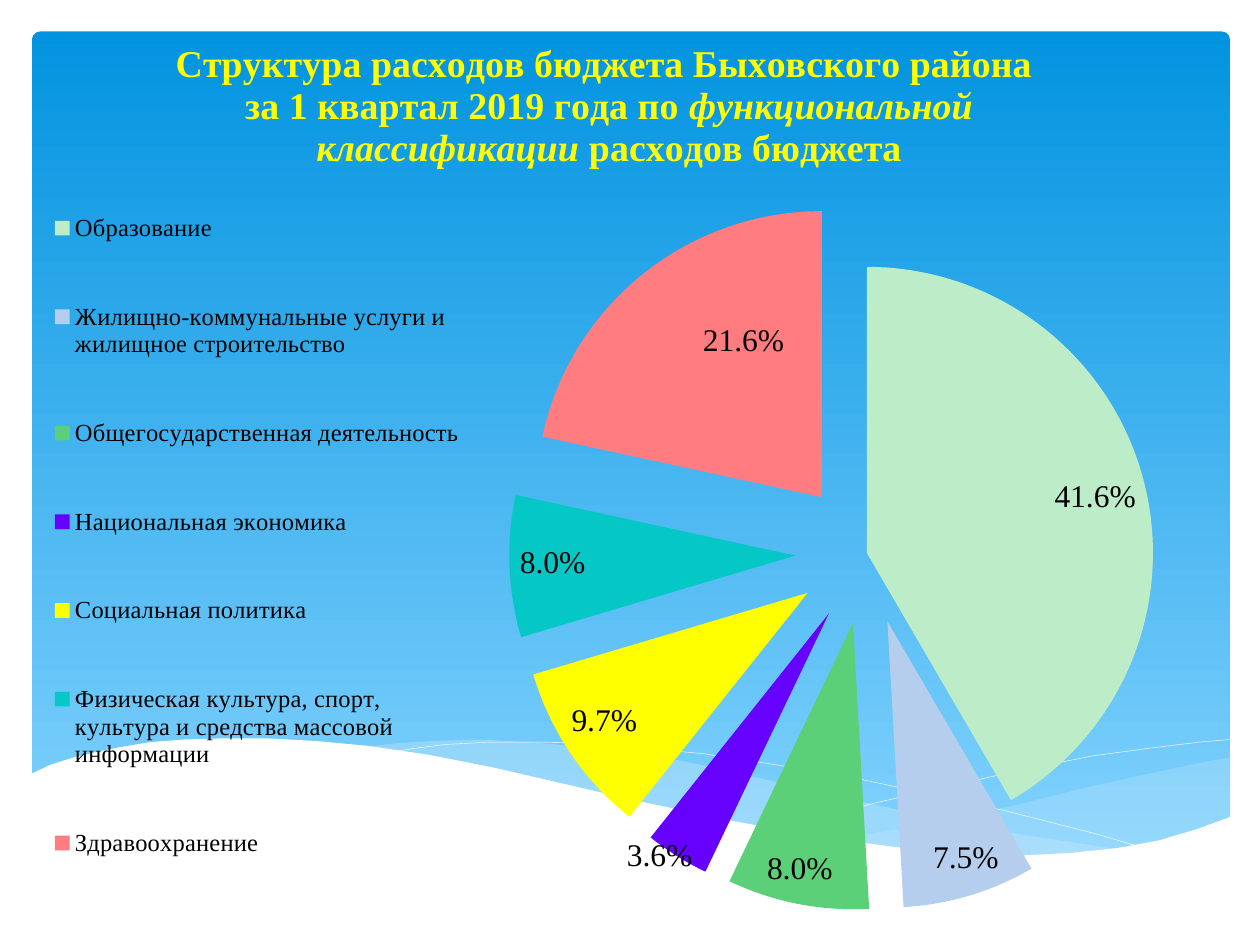
import pptx
import pptx.chart.data
import pptx.dml.color
import pptx.enum.chart
import pptx.enum.shapes
import pptx.enum.text
import pptx.oxml
import pptx.oxml.ns
import pptx.util

Pt = pptx.util.Pt
SERIF = "Times New Roman"
CHART_WIDTH, CHART_HEIGHT = 674.6, 510.5

# Content: title lines as (text, italic) runs
TITLE = [
    [("Структура расходов бюджета Быховского района ", False)],
    [("за 1 квартал 2019 года по ", False),
     ("функциональной классификации", True),
     (" расходов бюджета", False)],
]
# Name, share, colour, shift of the value label in points
EXPENSES = [
    ("Образование", 0.416, "BDECC9", None),
    ("Жилищно-коммунальные услуги и жилищное строительство",
     0.075, "B5CEED", (17.7, -7.4)),
    ("Общегосударственная деятельность", 0.08, "5BD078", (-18.3, -6.3)),
    ("Национальная экономика", 0.036, "6600FF", (-31, 13)),
    ("Социальная политика", 0.097, "FFFF00", (-2.9, -6.3)),
    ("Физическая культура, спорт, культура и средства массовой информации",
     0.08, "05C8C6", (1.7, -1.7)),
    ("Здравоохранение", 0.216, "FF7C80", (32, 25)),
]

# Backdrop waves: (points, fill, opacity in percent); no fill means a white line
WAVES = [
    ([(702.7, 432.7), (684, 436.3), (653, 442.8), (620.6, 450), (580.3, 460.1),
      (542.9, 468), (509, 474.5), (476.6, 480.2), (508.3, 484.6), (537.1, 487.4),
      (563, 488.9), (586.8, 489.6), (608.4, 488.9), (628.6, 487.4), (646.6, 484.6),
      (663.8, 480.2), (679.7, 475.9), (703.4, 467.3), (703.4, 432.7)], "C6E7FC", 29),
    ([(643.7, 486), (624.2, 483.1), (581.8, 476.6), (534.2, 467.3), (481.7, 455.8),
      (453.6, 449.3), (420.5, 441.4), (390.2, 434.9), (361.4, 430.6), (334.8, 427),
      (302.4, 424.1), (273.6, 422.6), (248.4, 423.4), (226.1, 424.8), (206.6, 427),
      (232.6, 430.6), (261.4, 434.9), (291.6, 441.4), (324, 449.3), (381.6, 462.2),
      (433.4, 473), (468.7, 477.4), (501.1, 483.8), (530.6, 487.4), (557.3, 488.9),
      (581.8, 489.6), (604.1, 489.6), (625, 488.2), (643.7, 486)], "C6E7FC", 40),
    ([(223.2, 429.8), (236.9, 427.7), (254.2, 425.5), (279.4, 424.1), (311.8, 424.1),
      (337.7, 424.8), (367.9, 427.7), (401, 430.6), (438.5, 436.3), (479.5, 442.8),
      (524.2, 452.2), (573.1, 463), (626.4, 476.6), (653.8, 484.6)], None, None),
    ([(442.1, 474.5), (470.2, 466.6), (501.1, 458.6), (539.3, 450), (581, 440.6),
      (624.2, 432), (655.9, 427.7), (685.4, 424.1), (702.7, 422.6)], None, None),
    ([(703.4, 466.6), (684, 473.8), (662.4, 480.2), (638.6, 484.6), (612, 487.4),
      (582.5, 488.9), (547.9, 487.4), (509.8, 483.8), (466.6, 478.1), (416.9, 468.7),
      (362.2, 457.2), (321.8, 447.8), (281.5, 438.5), (244.8, 431.3), (210.2, 426.2),
      (180, 423.4), (151.9, 421.9), (127.4, 421.9), (105.1, 422.6), (85.7, 424.1),
      (68.4, 427), (54.7, 429.8), (42.5, 432.7), (28.8, 437), (16.6, 442.8),
      (16.6, 526.3), (703.4, 526.3), (703.4, 466.6)], "FFFFFF", 100),
]


def rgb(code):
    return pptx.dml.color.RGBColor.from_string(code)


def style_font(font, size, color, italic=None, bold=None):
    font.size, font.name, font.bold, font.italic = Pt(size), SERIF, bold, italic
    font.color.rgb = rgb(color)


def set_layout(part, x, y, w=None, h=None, inner=False, place="edge", after=None):
    """Place a chart part, in points; the layout follows the named child."""
    qn = pptx.oxml.ns.qn
    for old in part.findall(qn("c:layout")):
        part.remove(old)
    target = '<c:layoutTarget val="inner"/>' if inner else ""
    modes = "".join(f'<c:{axis}Mode val="{place}"/>' for axis in "xy")
    box = (("x", x, CHART_WIDTH), ("y", y, CHART_HEIGHT),
           ("w", w, CHART_WIDTH), ("h", h, CHART_HEIGHT))
    sizes = "".join(f'<c:{tag} val="{value / whole:.5f}"/>'
                    for tag, value, whole in box if value is not None)
    layout = pptx.oxml.parse_xml(
        f'<c:layout {pptx.oxml.ns.nsdecls("c")}><c:manualLayout>'
        f"{target}{modes}{sizes}</c:manualLayout></c:layout>")
    if after:
        part.find(qn(after)).addnext(layout)
    else:
        part.insert(0, layout)


def add_wave(slide, points, fill, opacity):
    corners = [(Pt(x), Pt(y)) for x, y in points]
    builder = slide.shapes.build_freeform(*corners[0], scale=1.0)
    builder.add_line_segments(corners[1:], close=fill is not None)
    wave = builder.convert_to_shape()
    wave.shadow.inherit = False
    if fill is None:
        wave.fill.background()
        wave.line.color.rgb = rgb("FFFFFF")
        wave.line.width = Pt(0.25)
        return
    wave.line.fill.background()
    wave.fill.solid()
    wave.fill.fore_color.rgb = rgb(fill)
    if opacity < 100:
        color = wave.fill._xPr.find(".//" + pptx.oxml.ns.qn("a:srgbClr"))
        color.append(pptx.oxml.parse_xml(
            f'<a:alpha {pptx.oxml.ns.nsdecls("a")} val="{opacity * 1000}"/>'))


def add_backdrop(slide):
    sky = slide.shapes.add_shape(
        pptx.enum.shapes.MSO_SHAPE.ROUNDED_RECTANGLE, Pt(18.2), Pt(18), Pt(684.7), Pt(475.2))
    sky.adjustments[0] = 0.01
    sky.shadow.inherit = False
    sky.line.fill.background()
    sky.fill.gradient()
    sky.fill.gradient_angle = 270
    for stop, color, place in zip(sky.fill.gradient_stops, ("0293E0", "83D3FE"), (0, 1)):
        stop.color.rgb = rgb(color)
        stop.position = place
    for wave in WAVES:
        add_wave(slide, *wave)


def add_expense_pie(slide):
    data = pptx.chart.data.CategoryChartData(number_format="0.0%")
    data.categories = [name for name, *_ in EXPENSES]
    data.add_series("Series 1", [share for _, share, *_ in EXPENSES])
    chart = slide.shapes.add_chart(
        pptx.enum.chart.XL_CHART_TYPE.PIE,
        Pt(25.2), Pt(15.1), Pt(CHART_WIDTH), Pt(CHART_HEIGHT), data).chart
    chart.font.size = Pt(18)
    chart.font.name = "Calibri"
    chart.font.color.rgb = rgb("000000")

    # Title
    chart.has_title = True
    frame = chart.chart_title.text_frame
    for number, line in enumerate(TITLE):
        paragraph = frame.add_paragraph() if number else frame.paragraphs[0]
        paragraph.alignment = pptx.enum.text.PP_ALIGN.CENTER
        for text, italic in line:
            run = paragraph.add_run()
            run.text = text
            style_font(run.font, 21.6, "FFFF00", italic, True)
    set_layout(chart.chart_title._element, 73, 5.9, after="c:tx")

    # Legend
    chart.has_legend = True
    chart.legend.position = pptx.enum.chart.XL_LEGEND_POSITION.LEFT
    chart.legend.include_in_layout = False
    style_font(chart.legend.font, 14, "000000")
    set_layout(chart.legend._element, 3.6, 72.5, 236, 437, after="c:legendPos")

    # Slices: all but the first pulled out
    plot = chart.plots[0]
    plot.vary_by_categories = True
    set_layout(chart._chartSpace.chart.plotArea, 265.8, 96.5, 408.8, 408.9, inner=True)
    series = plot.series[0]
    series.format.line.fill.background()
    explosion = f'<c:explosion {pptx.oxml.ns.nsdecls("c")} val="%d"/>'
    series._element.find(pptx.oxml.ns.qn("c:spPr")).addnext(
        pptx.oxml.parse_xml(explosion % 25))
    for index, (_, _, color, _) in enumerate(EXPENSES):
        slice_format = series.points[index].format
        slice_format.fill.solid()
        slice_format.fill.fore_color.rgb = rgb(color)
        slice_format.line.fill.background()
    first = series._element.find(pptx.oxml.ns.qn("c:dPt"))
    first.find(pptx.oxml.ns.qn("c:spPr")).addprevious(
        pptx.oxml.parse_xml(explosion % 0))

    # Value labels
    inside_end = pptx.enum.chart.XL_LABEL_POSITION.INSIDE_END
    labels = series.data_labels
    labels.show_value = True
    labels.show_percentage = False
    labels.number_format = "0.0%"
    labels.number_format_is_linked = False
    labels.position = inside_end
    style_font(labels.font, 18, "000000")
    for index, (*_, shift) in enumerate(EXPENSES):
        if shift:
            label = series.points[index].data_label
            style_font(label.font, 18, "000000")
            label.position = inside_end
            element = labels._element.xpath(f"c:dLbl[c:idx/@val='{index}']")[0]
            set_layout(element, *shift, place="factor", after="c:idx")


def main():
    deck = pptx.Presentation()
    deck.slide_width, deck.slide_height = Pt(720), Pt(540)
    slide = deck.slides.add_slide(deck.slide_layouts[6])
    add_backdrop(slide)
    add_expense_pie(slide)
    deck.save("out.pptx")


if __name__ == "__main__":
    main()
